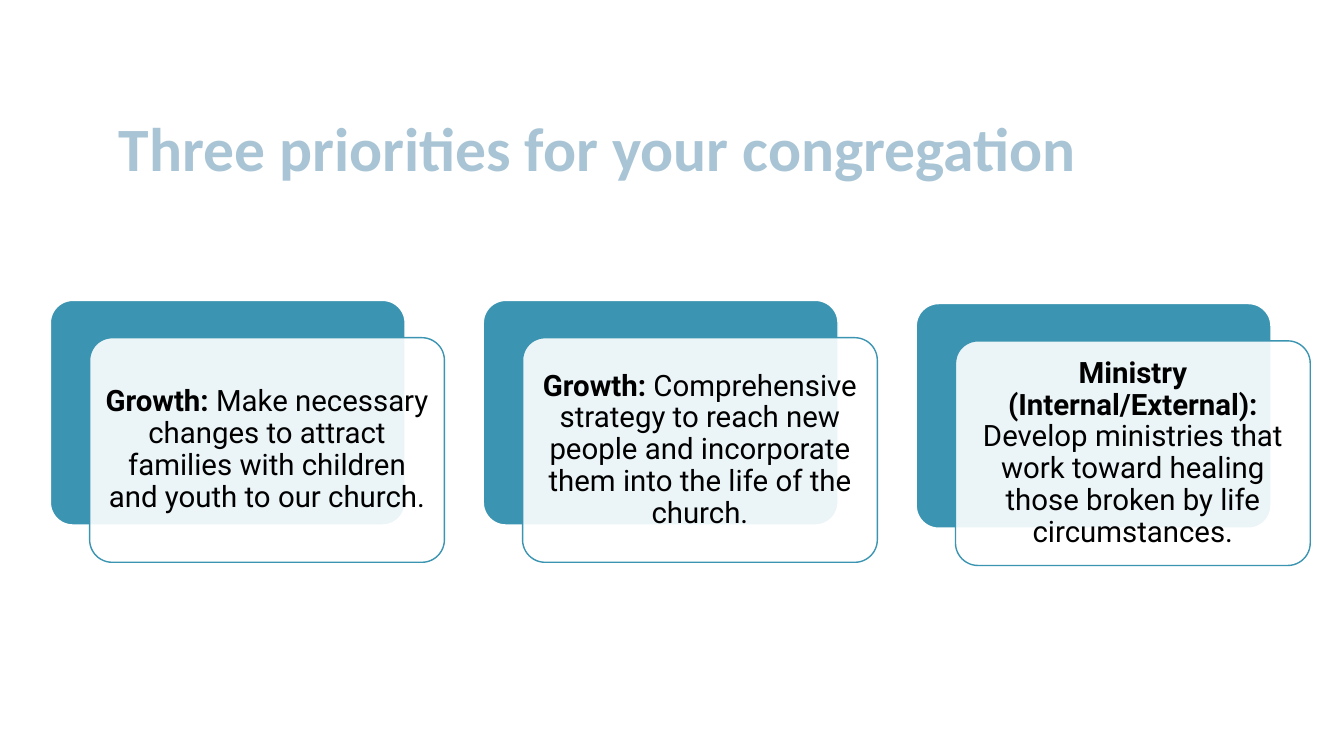
from lxml import etree
from pptx import Presentation
from pptx.dml.color import RGBColor
from pptx.enum.shapes import MSO_SHAPE
from pptx.enum.text import MSO_ANCHOR, PP_ALIGN
from pptx.oxml.ns import qn
from pptx.util import Cm, Pt

ROUNDED = MSO_SHAPE.ROUNDED_RECTANGLE
MIDDLE = MSO_ANCHOR.MIDDLE
CENTER = PP_ALIGN.CENTER

TITLE = "Three priorities for your congregation"
# heading, description, top of the back panel in cm
PRIORITIES = [
    ("Growth:", "Make necessary changes to attract families with children "
     "and youth to our church.", 7.57),
    ("Growth:", "Comprehensive strategy to reach new people and incorporate "
     "them into the life of the church.", 7.57),
    ("Ministry (Internal/External):", "Develop ministries that work toward "
     "healing those broken by life circumstances.", 7.65),
]

TEAL, WHITE, BLACK, PALE_BLUE = "3B94B1", "FFFFFF", "000000", "A9C5D5"
FIRST_LEFT, PITCH = 1.27, 10.91
PANEL_WIDTH, PANEL_HEIGHT = 8.94, 5.66
SHIFT_X, SHIFT_Y = 0.99, 0.94
INSET = 0.23


def color(hex_code):
    return RGBColor.from_string(hex_code)


def add_panel(left, top, fill, line):
    panel = slide.shapes.add_shape(
        ROUNDED, Cm(left), Cm(top), Cm(PANEL_WIDTH), Cm(PANEL_HEIGHT))
    panel.adjustments[0] = 0.1
    panel.shadow.inherit = False
    panel.fill.solid()
    panel.fill.fore_color.rgb = color(fill)
    panel.line.color.rgb = color(line)
    panel.line.width = Pt(1)
    return panel


def set_opacity(shape, percent):
    fill_color = shape.fill._xPr.find(qn("a:solidFill"))[0]
    etree.SubElement(fill_color, qn("a:alpha"), val=str(percent * 1000))


def write_priority(card, heading, description):
    frame = card.text_frame
    frame.word_wrap = True
    frame.vertical_anchor = MIDDLE
    frame.margin_left = frame.margin_right = Cm(INSET)
    frame.margin_top = frame.margin_bottom = Cm(INSET)
    paragraph = frame.paragraphs[0]
    paragraph.alignment = CENTER
    paragraph.line_spacing = 0.9
    paragraph.font.name = "Roboto"
    paragraph.font.size = Pt(21)
    paragraph.font.color.rgb = color(BLACK)
    heading_run = paragraph.add_run()
    heading_run.text = heading + " "
    heading_run.font.bold = True
    paragraph.add_run().text = description


presentation = Presentation()
presentation.slide_width = Cm(33.87)
presentation.slide_height = Cm(19.05)
slide = presentation.slides.add_slide(presentation.slide_layouts[6])

title = slide.shapes.add_textbox(Cm(2.74), Cm(1.98), Cm(30.28), Cm(3.68))
title.text_frame.word_wrap = True
title.text_frame.vertical_anchor = MIDDLE
title_line = title.text_frame.paragraphs[0]
title_line.text = TITLE
title_line.line_spacing = 0.9
title_line.font.name = "Calibri"
title_line.font.size = Pt(44)
title_line.font.bold = True
title_line.font.color.rgb = color(PALE_BLUE)

for index, (heading, description, top) in enumerate(PRIORITIES):
    left = FIRST_LEFT + index * PITCH
    add_panel(left, top, TEAL, WHITE)
    card = add_panel(left + SHIFT_X, top + SHIFT_Y, WHITE, TEAL)
    set_opacity(card, 90)
    write_priority(card, heading, description)

presentation.save("out.pptx")
